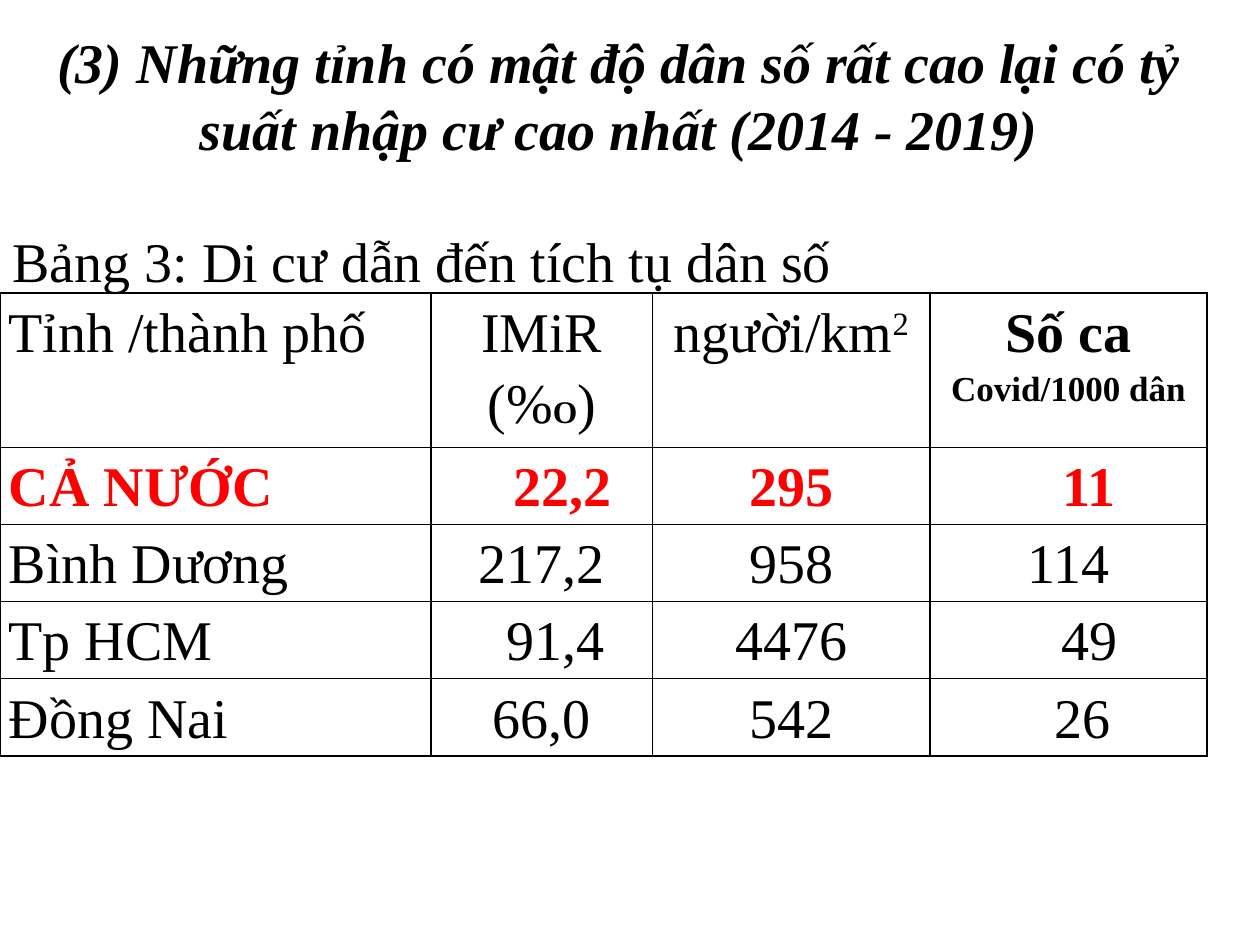
from lxml import etree
from pptx import Presentation
from pptx.dml.color import RGBColor
from pptx.enum.text import PP_ALIGN
from pptx.oxml.ns import qn
from pptx.util import Inches, Pt

LEFT, MID = PP_ALIGN.LEFT, PP_ALIGN.CENTER
WIDE, HIGH = 10, 7.5
FONT, SIZE = "Times New Roman", 32
BLACK, RED = "000000", "FF0000"
PAD, STEP = 0.07, 0.11
COLS = [3.42, 1.76, 2.2, 2.2]
ROWS = [2, 1, 1, 1, 1]
HEAD = [
    [[("Tỉnh /thành phố", {})]],
    [[("IMiR", {})], [("(%", {}), ("O", {"size": 18, "bold": True}), (")", {})]],
    [[("người/km", {}), ("2", {"base": 30})]],
    [[("Số ca", {"bold": True})], [("Covid/1000 dân", {"size": 20, "bold": True})]],
]
BODY = [
    ["CẢ NƯỚC", "22,2", "295", "11"],
    ["Bình Dương", "217,2", "958", "114"],
    ["Tp HCM", "91,4", "4476", "49"],
    ["Đồng Nai", "66,0", "542", "26"],
]
SHIFT = [[0, 3, 0, 3], [0, 0, 0, 0], [0, 2, 0, 3], [0, 0, 0, 2]]


def paint(code):
    """Turn a hex string into a colour."""
    return RGBColor.from_string(code)


def add_run(para, text, size=SIZE, bold=False, slant=False, tint=BLACK, base=0):
    """Add one styled run to a paragraph."""
    run = para.add_run()
    run.text = text
    font = run.font
    font.name, font.size, font.bold, font.italic = FONT, Pt(size), bold, slant
    font.color.rgb = paint(tint)
    if base:
        run.font._element.set("baseline", str(base * 1000))


def rule_cell(cell):
    """Draw a thin black line on each side of a cell."""
    props = cell._tc.get_or_add_tcPr()
    for spot, side in enumerate(("a:lnL", "a:lnR", "a:lnT", "a:lnB")):
        line = etree.Element(qn(side), w=str(Pt(1)))
        fill = etree.SubElement(line, qn("a:solidFill"))
        etree.SubElement(fill, qn("a:srgbClr"), val=BLACK)
        props.insert(spot, line)


def fill_cell(cell, paras, align, shift=0):
    """Write paragraphs of runs into a ruled, unfilled cell."""
    cell.fill.background()
    rule_cell(cell)
    cell.margin_left = Inches(PAD + shift * STEP)
    cell.margin_right = Inches(PAD)
    cell.margin_top = cell.margin_bottom = 0
    frame = cell.text_frame
    for num, runs in enumerate(paras):
        para = frame.add_paragraph() if num else frame.paragraphs[0]
        para.alignment, para.line_spacing = align, 1.15
        for text, style in runs:
            add_run(para, text, **style)


def add_grid(slide, left, top, width, height):
    """Place the migration table in the given box."""
    box = [Inches(n) for n in (left, top, width, height)]
    table = slide.shapes.add_table(len(ROWS), len(COLS), *box).table
    table.first_row = table.horz_banding = False
    for col, share in zip(table.columns, COLS):
        col.width = Inches(width * share / sum(COLS))
    for row, share in zip(table.rows, ROWS):
        row.height = Inches(height * share / sum(ROWS))
    for c, paras in enumerate(HEAD):
        fill_cell(table.cell(0, c), paras, MID if c else LEFT)
    for r, (words, shifts) in enumerate(zip(BODY, SHIFT)):
        style = {} if r else {"bold": True, "tint": RED}
        for c, (word, shift) in enumerate(zip(words, shifts)):
            cell = table.cell(r + 1, c)
            fill_cell(cell, [[(word, style)]], MID if c else LEFT, shift)


def add_head(slide, left, top, width, height):
    """Place the title and the table caption in the given box."""
    box = [Inches(n) for n in (left, top, width, height)]
    frame = slide.shapes.add_textbox(*box).text_frame
    frame.word_wrap = True
    title = frame.paragraphs[0]
    title.alignment = MID
    add_run(title, "(3) Những tỉnh có mật độ dân số rất cao lại có tỷ suất "
            "nhập cư cao nhất (2014 - 2019)", bold=True, slant=True)
    label = frame.add_paragraph()
    label.alignment, label.space_before = LEFT, Pt(37)
    add_run(label, "Bảng 3: Di cư dẫn đến tích tụ dân số")


def main():
    """Build and save the slide."""
    deck = Presentation()
    deck.slide_width, deck.slide_height = Inches(WIDE), Inches(HIGH)
    slide = deck.slides.add_slide(deck.slide_layouts[6])
    add_grid(slide, 0, HIGH * 0.31, sum(COLS), HIGH * 0.49)
    add_head(slide, 0, 0.17, WIDE - 0.17, HIGH * 0.44)
    deck.save("out.pptx")


if __name__ == "__main__":
    main()
